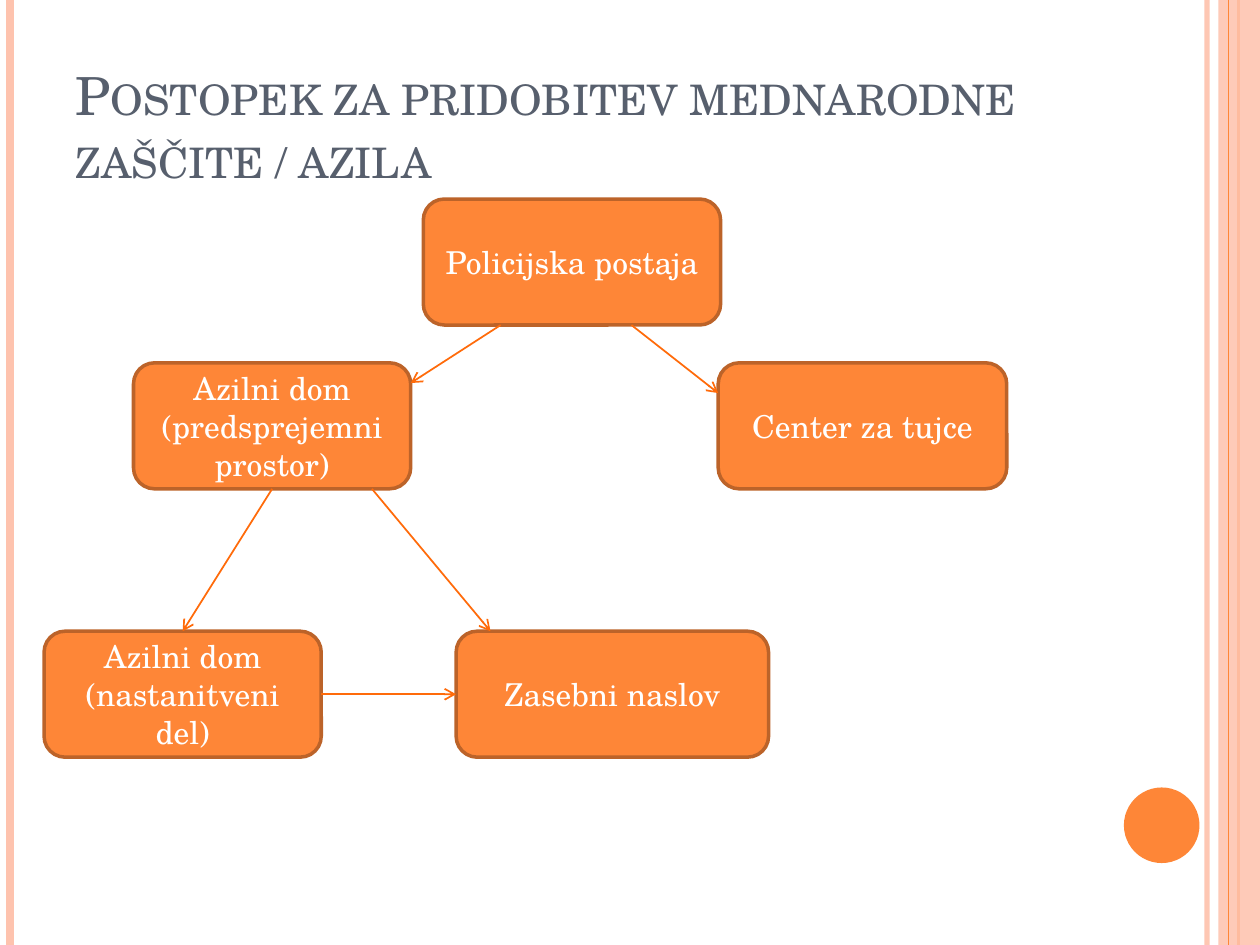
from dataclasses import dataclass
from typing import Optional

from lxml.etree import SubElement
from pptx import Presentation
from pptx.dml.color import RGBColor
from pptx.enum.shapes import MSO_CONNECTOR as Conn, MSO_SHAPE as Kind
from pptx.enum.text import MSO_ANCHOR as Anchor, MSO_AUTO_SIZE as Fit, PP_ALIGN as Align
from pptx.oxml.ns import qn
from pptx.util import Inches, Pt

COLS, ROWS = 100, 75


@dataclass(frozen=True)
class Theme:
    font: str = "TeX Gyre Schola"
    head: int = 30
    body: int = 18
    ink: str = "575F6D"
    light: str = "FFFFFF"
    fill: str = "FE8637"
    edge: str = "BC6329"
    arrow: str = "FF6B0A"
    pale: str = "FEC3AE"


@dataclass(frozen=True)
class Box:
    text: str
    left: float
    top: float
    width: float
    height: float = 10

    def spot(self, across: float, down: float) -> tuple[float, float]:
        return self.left + across * self.width, self.top + down * self.height


@dataclass(frozen=True)
class Link:
    start: tuple[float, float]
    end: tuple[float, float]


@dataclass(frozen=True)
class Stripe:
    col: float
    width: float
    color: str
    alpha: int = 100


theme = Theme()
deck = Presentation()
deck.slide_width, deck.slide_height = Inches(10), Inches(7.5)
slide = deck.slides.add_slide(deck.slide_layouts[5])


def across(cols: float) -> int:
    return round(deck.slide_width * cols / COLS)


def down(rows: float) -> int:
    return round(deck.slide_height * rows / ROWS)


def fade(item, alpha: int) -> None:
    if alpha < 100:
        for color in item._element.spPr.iter(qn("a:srgbClr")):
            SubElement(color, qn("a:alpha"), val=str(alpha * 1000))


def write(frame, text: str, size: int, color: str, align: Align):
    para = frame.paragraphs[0]
    para.alignment = align
    run = para.add_run()
    run.text = text
    run.font.name = theme.font
    run.font.size = Pt(size)
    run.font.color.rgb = RGBColor.from_string(color)
    return run


def draw_line(start: tuple[float, float], end: tuple[float, float], color: str, width: float):
    line = slide.shapes.add_connector(
        Conn.STRAIGHT, across(start[0]), down(start[1]), across(end[0]), down(end[1]))
    line.line.color.rgb = RGBColor.from_string(color)
    line.line.width = Pt(width)
    SubElement(line._element.spPr, qn("a:effectLst"))
    return line


def draw_shape(kind: Kind, left: float, top: float, width: float, height: float, color: str):
    shape = slide.shapes.add_shape(
        kind, across(left), down(top), across(width), down(height))
    shape.shadow.inherit = False
    shape.fill.solid()
    shape.fill.fore_color.rgb = RGBColor.from_string(color)
    shape.line.fill.background()
    return shape


def draw_stripe(stripe: Stripe) -> None:
    line = draw_line((stripe.col, 0), (stripe.col, ROWS), stripe.color, stripe.width)
    fade(line, stripe.alpha)


def draw_box(box: Box) -> None:
    shape = draw_shape(Kind.ROUNDED_RECTANGLE, box.left, box.top, box.width, box.height, theme.fill)
    shape.line.color.rgb = RGBColor.from_string(theme.edge)
    shape.line.width = Pt(2)
    frame = shape.text_frame
    frame.word_wrap = True
    frame.vertical_anchor = Anchor.MIDDLE
    write(frame, box.text, theme.body, theme.light, Align.CENTER)


def draw_link(link: Link) -> None:
    line = draw_line(link.start, link.end, theme.arrow, 1)
    SubElement(line.line._get_or_add_ln(), qn("a:tailEnd"), type="arrow")


def draw_title(text: str, left: float, top: float, width: float, height: float) -> None:
    title = slide.shapes.title
    title.left, title.top = across(left), down(top)
    title.width, title.height = across(width), down(height)
    frame = title.text_frame
    frame.word_wrap = True
    frame.auto_size = Fit.NONE
    frame.vertical_anchor = Anchor.BOTTOM
    run = write(frame, text, theme.head, theme.ink, Align.LEFT)
    run.font._element.set("cap", "small")


def draw_frame() -> None:
    for stripe in (Stripe(95.8, 3, theme.pale, 93),
                   Stripe(0.8, 4.5, theme.pale),
                   Stripe(98.3, 1.5, theme.fill)):
        draw_stripe(stripe)
    fade(draw_shape(Kind.RECTANGLE, 96.7, 0, 3.3, ROWS, theme.pale), 87)
    draw_stripe(Stripe(97.5, 0.75, theme.fill))
    draw_shape(Kind.OVAL, 89.2, 62.5, 6, 6, theme.fill)


def main() -> None:
    police = Box("Policijska postaja", 33.6, 15.8, 23.6)
    entry = Box("Azilni dom (predsprejemni prostor)", 10.6, 28.8, 22)
    center = Box("Center za tujce", 57, 28.8, 22.9)
    home = Box("Azilni dom (nastanitveni del)", 3.5, 50.1, 22)
    private = Box("Zasebni naslov", 36.2, 50.1, 24.8)

    draw_frame()
    draw_title("Postopek za pridobitev mednarodne zaščite / azila", 5, 3, 81.7, 12.5)
    for box in (police, entry, center, home, private):
        draw_box(box)
    for link in (Link(police.spot(0.26, 1), entry.spot(1, 0.16)),
                 Link(police.spot(0.7, 1), center.spot(0, 0.24)),
                 Link(entry.spot(0.5, 1), home.spot(0.5, 0)),
                 Link(entry.spot(0.86, 1), private.spot(0.11, 0)),
                 Link(home.spot(1, 0.5), private.spot(0, 0.5))):
        draw_link(link)
    deck.save("out.pptx")


if __name__ == "__main__":
    main()
